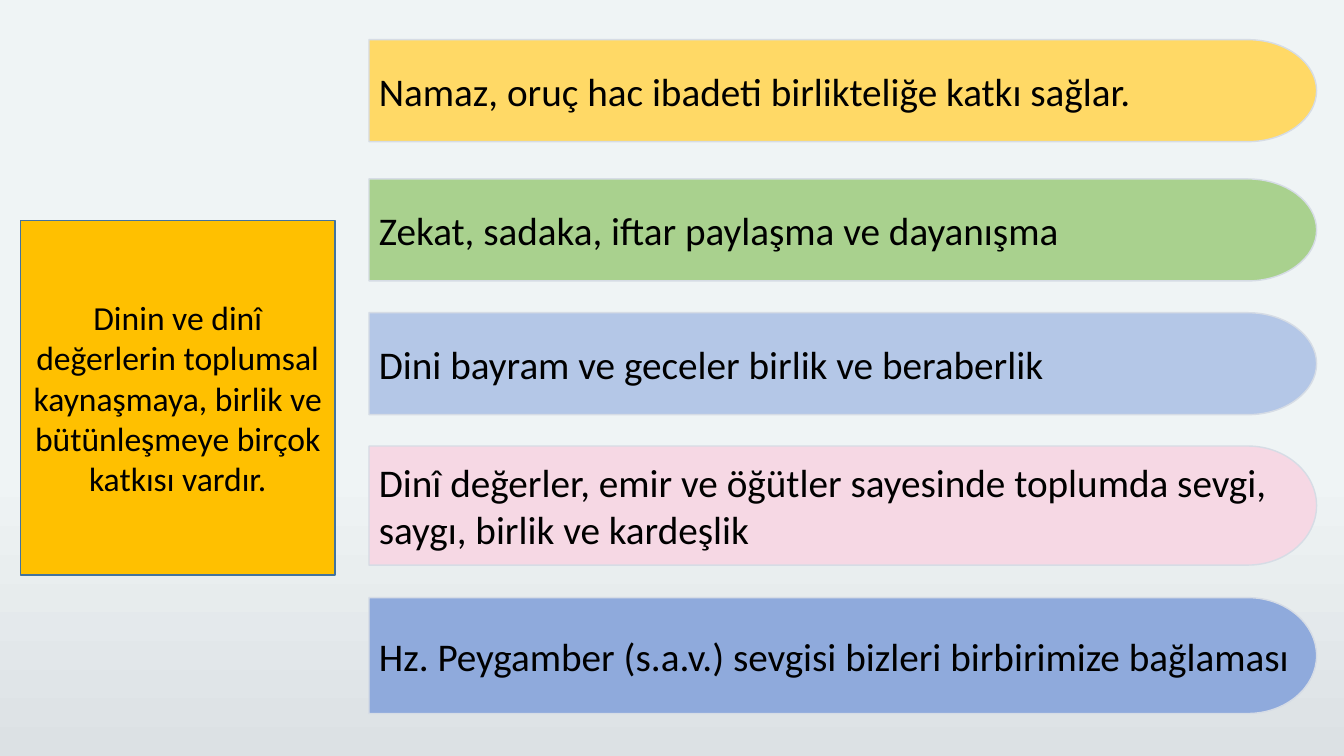
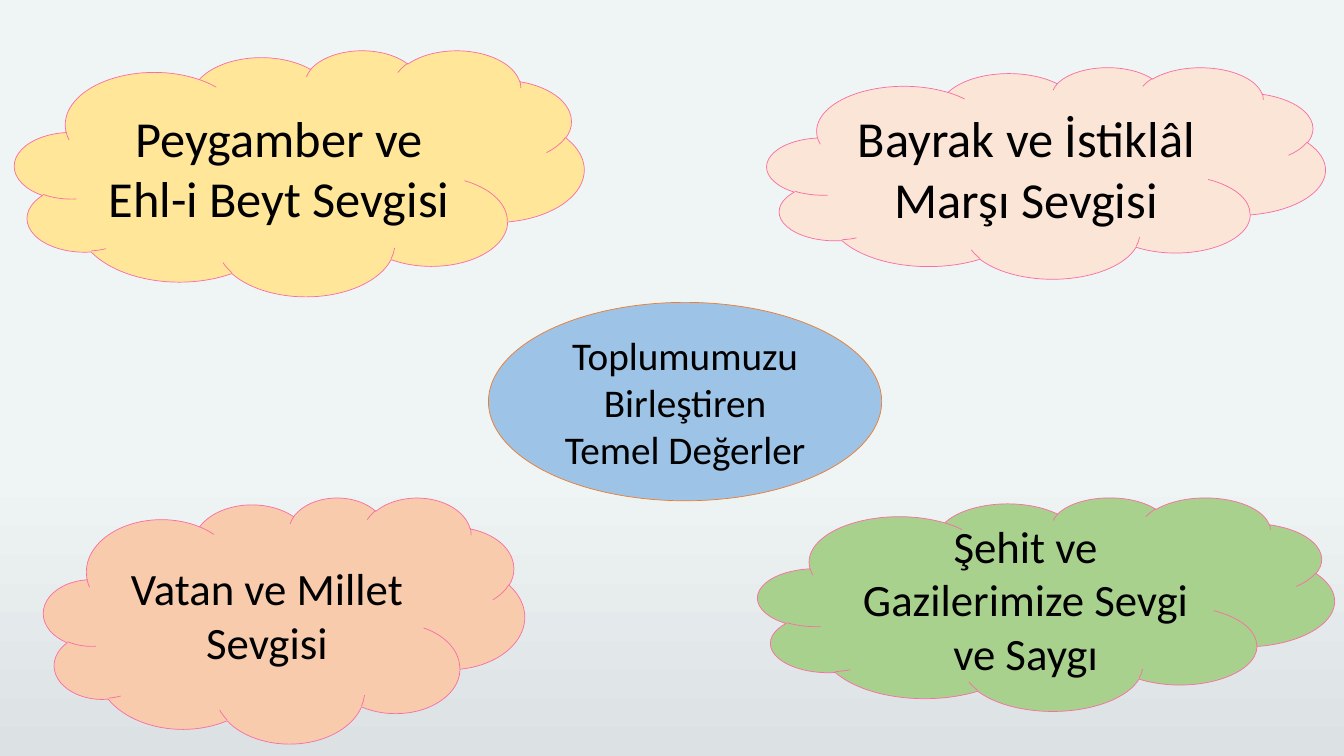
from dataclasses import dataclass

from lxml.etree import SubElement
from pptx import Presentation
from pptx.dml.color import RGBColor
from pptx.enum.shapes import MSO_SHAPE
from pptx.enum.text import MSO_ANCHOR, PP_ALIGN
from pptx.oxml.ns import qn
from pptx.util import Cm, Pt

RECT, OVAL, CLOUD = MSO_SHAPE.RECTANGLE, MSO_SHAPE.OVAL, MSO_SHAPE.CLOUD
MIDDLE = MSO_ANCHOR.MIDDLE
LEFT, CENTER = PP_ALIGN.LEFT, PP_ALIGN.CENTER
BLANK = 6
ARC = 0.55


@dataclass(frozen=True)
class Theme:
    font: str = "Calibri"
    ink: str = "000000"
    sky: str = "EFF4F5"
    mist: str = "DCE1E4"
    gold: str = "FFC000"
    navy: str = "43739E"
    yellow: str = "FFD966"
    cream: str = "FFE699"
    green: str = "A9D18E"
    pale: str = "B4C7E7"
    rose: str = "F6D8E4"
    blue: str = "8FAADC"
    aqua: str = "9DC3E6"
    peach: str = "FBE5D6"
    coral: str = "F8CBAD"
    gray: str = "D6DCE5"
    orange: str = "ED7D31"
    pink: str = "FA6DA2"
    small: int = 24
    body: int = 28
    large: int = 32
    huge: int = 36
    thin: float = 0.5
    thick: float = 1


THEME = Theme()

CLAIM = "Dinin ve dinî değerlerin toplumsal kaynaşmaya, birlik ve bütünleşmeye birçok katkısı vardır."
BANDS = [
    (1, 2.57, THEME.yellow, "Namaz, oruç hac ibadeti birlikteliğe katkı sağlar."),
    (4.51, 2.57, THEME.green, "Zekat, sadaka, iftar paylaşma ve dayanışma"),
    (7.88, 2.57, THEME.pale, "Dini bayram ve geceler birlik ve beraberlik"),
    (11.24, 3, THEME.rose, "Dinî değerler, emir ve öğütler sayesinde toplumda sevgi, saygı, birlik ve kardeşlik"),
    (15.06, 2.92, THEME.blue, "Hz. Peygamber (s.a.v.) sevgisi bizleri birbirimize bağlaması"),
]
CORE = "Toplumumuzu Birleştiren Temel Değerler"
CLOUDS = [
    ((0.37, 1.26, 14.35, 6.2), THEME.cream, THEME.huge, "Peygamber ve Ehl-i Beyt Sevgisi"),
    ((19.33, 1.69, 14.07, 5.33), THEME.peach, THEME.huge, "Bayrak ve İstiklâl Marşı Sevgisi"),
    ((1.1, 12.53, 12.12, 6.2), THEME.coral, THEME.large, "Vatan ve Millet Sevgisi"),
    ((19.1, 12.53, 14.53, 5.38), THEME.green, THEME.large, "Şehit ve Gazilerimize Sevgi ve Saygı"),
]


def color(code):
    return RGBColor.from_string(code)


def dress(shape, fill, line, width):
    shape.shadow.inherit = False
    shape.fill.solid()
    shape.fill.fore_color.rgb = color(fill)
    shape.line.color.rgb = color(line)
    shape.line.width = Pt(width)


def write(shape, text, size, align=CENTER):
    frame = shape.text_frame
    frame.word_wrap = True
    frame.vertical_anchor = MIDDLE
    frame.text = text
    para = frame.paragraphs[0]
    para.alignment = align
    para.font.name = THEME.font
    para.font.size = Pt(size)
    para.font.color.rgb = color(THEME.ink)


def add_label(slide, kind, box, fill, line, width, size, text):
    shape = slide.shapes.add_shape(kind, *map(Cm, box))
    dress(shape, fill, line, width)
    write(shape, text, size)


def bend(node, pulls):
    node.tag = qn("a:cubicBezTo")
    end = node[0]
    for x, y in pulls:
        spot = SubElement(node, qn("a:pt"))
        spot.set("x", str(Cm(x)))
        spot.set("y", str(Cm(y)))
    node.append(end)


def add_band(slide, box, fill, text, bulge=1.73):
    left, top, wide, high = box
    edge, half = wide - bulge, high / 2
    spots = [(edge, 0), (wide, half), (edge, high), (0, high)]
    draft = slide.shapes.build_freeform(0, 0)
    draft.add_line_segments([(Cm(x), Cm(y)) for x, y in spots], close=True)
    shape = draft.convert_to_shape(Cm(left), Cm(top))
    lines = list(shape.element.iter(qn("a:lnTo")))
    reach, rise = edge + bulge * ARC, half * ARC
    bend(lines[1], [(reach, 0), (wide, half - rise)])
    bend(lines[2], [(wide, half + rise), (reach, high)])
    dress(shape, fill, THEME.gray, THEME.thick)
    write(shape, text, THEME.body, LEFT)


def paint_master(deck, slide):
    panel = slide.shapes.add_shape(RECT, 0, 0, deck.slide_width, deck.slide_height)
    panel.shadow.inherit = False
    panel.line.fill.background()
    panel.fill.gradient()
    panel.fill.gradient_angle = 270
    tones = [(0.62, THEME.sky), (1, THEME.mist)]
    for stop, (place, tone) in zip(panel.fill.gradient_stops, tones):
        stop.position = place
        stop.color.rgb = color(tone)
    deck.slide_master.shapes.element.insert(2, panel.element)


def build_list(slide, left=9.3, wide=23.88):
    add_label(slide, RECT, (0.52, 5.55, 7.92, 8.94), THEME.gold, THEME.navy,
              THEME.thick, THEME.small, CLAIM)
    for top, high, fill, text in BANDS:
        add_band(slide, (left, top, wide, high), fill, text)


def build_map(slide):
    add_label(slide, OVAL, (12.31, 7.62, 9.91, 5), THEME.aqua, THEME.orange,
              THEME.thin, THEME.body, CORE)
    for box, fill, size, text in CLOUDS:
        add_label(slide, CLOUD, box, fill, THEME.pink, THEME.thin, size, text)


def main():
    deck = Presentation()
    deck.slide_width, deck.slide_height = Cm(33.87), Cm(19.05)
    first, second = [deck.slides.add_slide(deck.slide_layouts[BLANK]) for _ in range(2)]
    paint_master(deck, first)
    build_list(first)
    build_map(second)
    deck.save("out.pptx")


if __name__ == "__main__":
    main()
